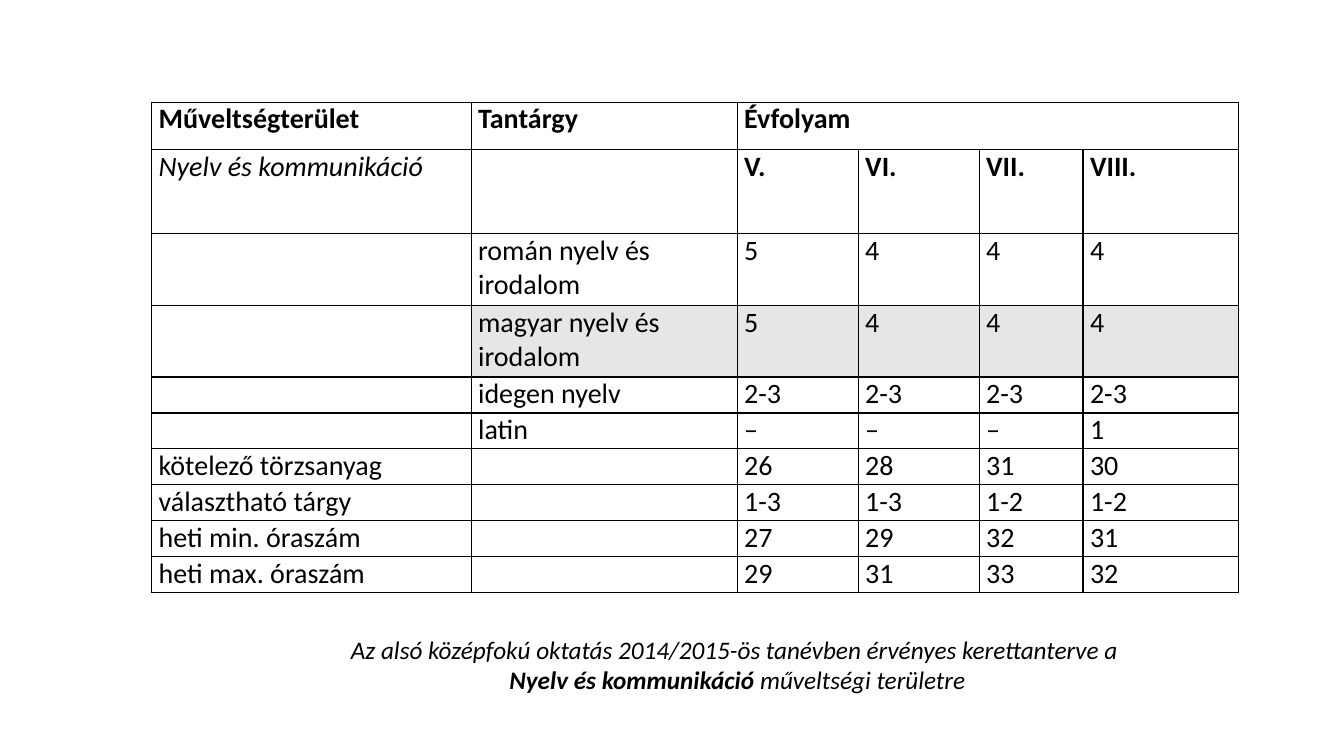
from lxml.etree import SubElement
from pptx import Presentation
from pptx.dml.color import RGBColor
from pptx.enum.text import MSO_AUTO_SIZE, PP_ALIGN
from pptx.oxml.ns import qn
from pptx.util import Pt

BLACK = RGBColor(0x00, 0x00, 0x00)
GRAY = RGBColor(0xE7, 0xE6, 0xE6)

COLUMN_WIDTHS = [228.2, 190.1, 86.4, 86.4, 74.2, 110.9]
ROW_HEIGHTS = [34, 60] + [51.2] * 2 + [25.65] * 6
HIGHLIGHTED_ROW = 3
CURRICULUM = [
    ["Műveltségterület", "Tantárgy", "Évfolyam", "", "", ""],
    ["Nyelv és kommunikáció", "", "V.", "VI.", "VII.", "VIII."],
    ["", "román nyelv és irodalom", "5", "4", "4", "4"],
    ["", "magyar nyelv és irodalom", "5", "4", "4", "4"],
    ["", "idegen nyelv", "2-3", "2-3", "2-3", "2-3"],
    ["", "latin", "–", "–", "–", "1"],
    ["kötelező törzsanyag", "", "26", "28", "31", "30"],
    ["választható tárgy", "", "1-3", "1-3", "1-2", "1-2"],
    ["heti min. óraszám", "", "27", "29", "32", "31"],
    ["heti max. óraszám", "", "29", "31", "33", "32"],
]
CAPTION = [
    [("Az alsó középfokú oktatás 2014/2015-ös tanévben érvényes kerettanterve a ", False)],
    [("Nyelv és kommunikáció ", True), ("műveltségi területre", False)],
]


def write_text(paragraph, text, size=20, bold=False, italic=False, font="Calibri", color=BLACK):
    run = paragraph.add_run()
    run.text = text
    run.font.name = font
    run.font.size = Pt(size)
    run.font.bold = bold
    run.font.italic = italic
    run.font.color.rgb = color


class SlideBuilder:
    border_width = 1
    cell_inset = 5.04
    caption_size = 18

    def __init__(self, slide):
        self.slide = slide

    def add_borders(self, cell):
        properties = cell._tc.get_or_add_tcPr()
        for position, side in enumerate(("lnL", "lnR", "lnT", "lnB")):
            line = SubElement(properties, qn(f"a:{side}"), w=str(Pt(self.border_width)))
            fill = SubElement(line, qn("a:solidFill"))
            SubElement(fill, qn("a:srgbClr"), val=str(BLACK))
            properties.insert(position, line)

    def format_cell(self, cell, fill_color=None):
        cell.margin_left = cell.margin_right = Pt(self.cell_inset)
        cell.margin_top = cell.margin_bottom = 0
        if fill_color is None:
            cell.fill.background()
        else:
            cell.fill.solid()
            cell.fill.fore_color.rgb = fill_color
        self.add_borders(cell)

    def add_curriculum_table(self, left, top):
        table = self.slide.shapes.add_table(
            len(ROW_HEIGHTS), len(COLUMN_WIDTHS), Pt(left), Pt(top),
            Pt(sum(COLUMN_WIDTHS)), Pt(sum(ROW_HEIGHTS))).table
        table.first_row = table.horz_banding = False
        for column, width in zip(table.columns, COLUMN_WIDTHS):
            column.width = Pt(width)
        for row, height in zip(table.rows, ROW_HEIGHTS):
            row.height = Pt(height)

        for row_index, texts in enumerate(CURRICULUM):
            for column_index, text in enumerate(texts):
                cell = table.cell(row_index, column_index)
                highlighted = row_index == HIGHLIGHTED_ROW and column_index > 0
                self.format_cell(cell, GRAY if highlighted else None)
                if text:
                    area_name = row_index == 1 and column_index == 0
                    write_text(cell.text_frame.paragraphs[0], text,
                               bold=row_index < 2 and not area_name, italic=area_name)
        # The grade heading spans all four grades
        table.cell(0, 2).merge(table.cell(0, 5))

    def add_caption(self, left, top, width, height):
        frame = self.slide.shapes.add_textbox(Pt(left), Pt(top), Pt(width), Pt(height)).text_frame
        frame.word_wrap = False
        frame.auto_size = MSO_AUTO_SIZE.SHAPE_TO_FIT_TEXT
        for index, pieces in enumerate(CAPTION):
            paragraph = frame.add_paragraph() if index else frame.paragraphs[0]
            paragraph.alignment = PP_ALIGN.CENTER
            for text, bold in pieces:
                write_text(paragraph, text, size=self.caption_size, bold=bold, italic=True)


def main():
    presentation = Presentation()
    presentation.slide_width = Pt(960)
    presentation.slide_height = Pt(540)
    builder = SlideBuilder(presentation.slides.add_slide(presentation.slide_layouts[6]))

    # Caption below the table
    builder.add_caption(211, 449.3, 631.4, 51.1)

    # Weekly hours by subject and grade
    builder.add_curriculum_table(108.3, 73)

    presentation.save("out.pptx")


if __name__ == "__main__":
    main()
